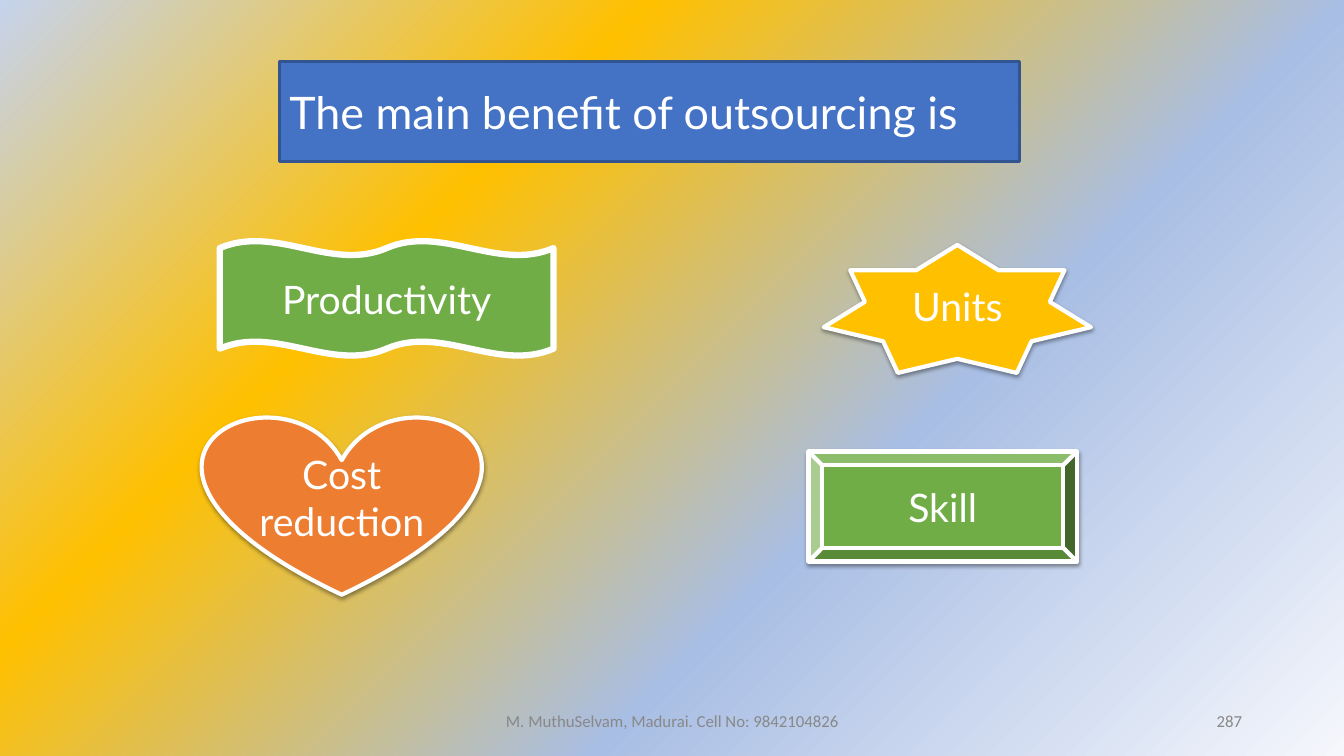
from dataclasses import dataclass

from pptx import Presentation
from pptx.dml.color import RGBColor
from pptx.enum.shapes import MSO_SHAPE
from pptx.enum.text import MSO_ANCHOR, MSO_AUTO_SIZE, PP_ALIGN
from pptx.oxml import parse_xml
from pptx.oxml.ns import nsdecls, qn
from pptx.util import Inches, Pt

LEFT, CENTER, RIGHT = PP_ALIGN.LEFT, PP_ALIGN.CENTER, PP_ALIGN.RIGHT
MIDDLE = MSO_ANCHOR.MIDDLE
NO_AUTOFIT = MSO_AUTO_SIZE.NONE
HEART, STAR = MSO_SHAPE.HEART, MSO_SHAPE.STAR_7_POINT
BEVEL, WAVE = MSO_SHAPE.BEVEL, MSO_SHAPE.DOUBLE_WAVE
TITLE_ONLY = 5

COLORS = {
    "white": "FFFFFF",
    "orange": "ED7D31",
    "gold": "FFC000",
    "green": "70AD47",
    "blue": "4472C4",
    "navy": "325491",
    "gray": "888888",
}
GRADIENT = [(0, "F5F7FC"), (36, "A9BEE4"), (69, COLORS["gold"]), (100, "C5D3ED")]

Box = tuple[float, float, float, float]


@dataclass
class Answer:
    text: str
    geometry: MSO_SHAPE
    box: Box
    fill: str
    line_width: float = 3
    shadow: bool = True


@dataclass
class FooterText:
    text: str
    box: Box
    align: PP_ALIGN


ANSWERS = [
    Answer("Cost reduction", HEART, (2.01, 4.12, 2.76, 1.78), "orange"),
    Answer("Units", STAR, (8.17, 2.43, 2.65, 1.27), "gold"),
    Answer("Skill", BEVEL, (8.02, 4.48, 2.66, 1.09), "green"),
    Answer("Productivity", WAVE, (2.18, 2.39, 3.31, 1.14), "green", 4.5, False),
]
FOOTER = [
    FooterText("M. MuthuSelvam, Madurai. Cell No: 9842104826", (4.42, 6.95, 4.5, 0.4), CENTER),
    FooterText("287", (9.42, 6.95, 3, 0.4), RIGHT),
]


def rgb(name: str) -> RGBColor:
    return RGBColor.from_string(COLORS[name])


def set_background(s) -> None:
    """Give the slide a gradient that spreads from its lower right corner."""
    stops = "".join(
        f'<a:gs pos="{pos * 1000}"><a:srgbClr val="{color}"/></a:gs>' for pos, color in GRADIENT
    )
    s.element.cSld.insert(0, parse_xml(
        f'<p:bg {nsdecls("p", "a")}><p:bgPr><a:gradFill rotWithShape="1">'
        f'<a:gsLst>{stops}</a:gsLst><a:path path="circle">'
        '<a:fillToRect l="100000" t="100000"/></a:path></a:gradFill>'
        '<a:effectLst/></p:bgPr></p:bg>'
    ))


def write(sp, text: str, size: float, font: str, color: str, align: PP_ALIGN) -> None:
    tf = sp.text_frame
    tf.word_wrap = True
    tf.auto_size = NO_AUTOFIT
    tf.vertical_anchor = MIDDLE
    p = tf.paragraphs[0]
    p.alignment = align
    r = p.add_run()
    r.text = text
    r.font.size = Pt(size)
    r.font.name = font
    r.font.color.rgb = rgb(color)


def paint(sp, fill: str, line: str, width: float) -> None:
    sp.fill.solid()
    sp.fill.fore_color.rgb = rgb(fill)
    sp.line.color.rgb = rgb(line)
    sp.line.width = Pt(width)


def add_title(s, text: str, box: Box) -> None:
    """Turn the title placeholder into a scroll and write the question on it."""
    sp = s.shapes.title
    sp.left, sp.top, sp.width, sp.height = map(Inches, box)
    sp.element.spPr.append(parse_xml(
        f'<a:prstGeom {nsdecls("a")} prst="horizontalScroll"><a:avLst/></a:prstGeom>'
    ))
    paint(sp, "blue", "navy", 2)
    write(sp, text, 32, "Lato", "white", LEFT)


def add_answer(s, answer: Answer) -> None:
    sp = s.shapes.add_shape(answer.geometry, *map(Inches, answer.box))
    paint(sp, answer.fill, "white", answer.line_width)
    sp.shadow.inherit = False
    if answer.shadow:
        sp.element.spPr.find(qn("a:effectLst")).append(parse_xml(
            f'<a:outerShdw {nsdecls("a")} blurRad="{Pt(3.1)}" dist="{Pt(1.6)}" dir="5400000" '
            'rotWithShape="0"><a:srgbClr val="000000"><a:alpha val="38000"/></a:srgbClr>'
            '</a:outerShdw>'
        ))
    write(sp, answer.text, 28, "Lato", "white", CENTER)


def add_footer_text(s, item: FooterText) -> None:
    sp = s.shapes.add_textbox(*map(Inches, item.box))
    write(sp, item.text, 12, "Calibri", "gray", item.align)


def main() -> None:
    prs = Presentation()
    prs.slide_width, prs.slide_height = Inches(13.33), Inches(7.5)
    s = prs.slides.add_slide(prs.slide_layouts[TITLE_ONLY])
    set_background(s)
    add_title(s, "The main benefit of outsourcing is", (2.77, 0.61, 7.34, 0.99))
    for answer in ANSWERS:
        add_answer(s, answer)
    for item in FOOTER:
        add_footer_text(s, item)
    prs.save("out.pptx")


if __name__ == "__main__":
    main()
